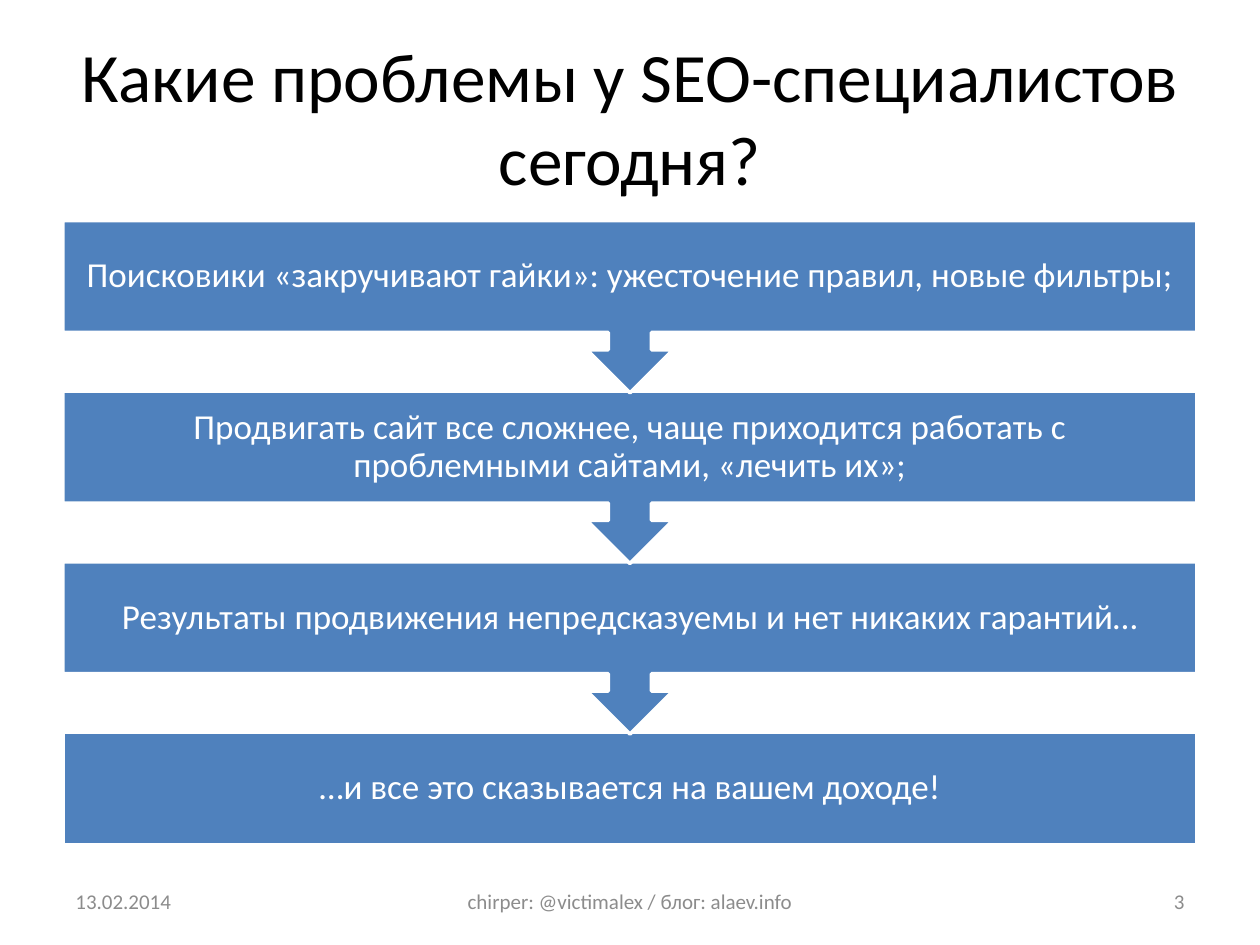
from pptx import Presentation
from pptx.dml.color import RGBColor
from pptx.enum.shapes import MSO_SHAPE as Shape
from pptx.enum.text import MSO_ANCHOR as Anchor, PP_ALIGN as Align
from pptx.util import Pt

COLORS = {"title": "000000", "step": "4F81BD", "light": "FFFFFF", "foot": "8C8C8C"}
FONT = "Calibri"
LEFT, WIDTH = 36, 648
STEP_TOP, PITCH = 126, 97.5
BOX_H, CALL_H = 64, 98.5

STEPS = [
    "Поисковики «закручивают гайки»: ужесточение правил, новые фильтры;",
    "Продвигать сайт все сложнее, чаще приходится работать с проблемными сайтами, «лечить их»;",
    "Результаты продвижения непредсказуемы и нет никаких гарантий…",
    "…и все это сказывается на вашем доходе!",
]
FOOTS = [
    (36, 168, "13.02.2014", Align.LEFT),
    (246, 228, "chirper: @victimalex / блог: alaev.info", Align.CENTER),
    (516, 168, "3", Align.RIGHT),
]


def color(name):
    return RGBColor.from_string(COLORS[name])


def write(shape, text, size, tone, align):
    frame = shape.text_frame
    frame.text = text
    frame.word_wrap = True
    frame.vertical_anchor = Anchor.MIDDLE
    para = frame.paragraphs[0]
    para.alignment = align
    font = para.runs[0].font
    font.name, font.size = FONT, Pt(size)
    font.color.rgb = color(tone)
    return frame


def add_title(slide, text):
    title = slide.shapes.title
    title.left, title.top = Pt(LEFT), Pt(21.6)
    title.width, title.height = Pt(WIDTH), Pt(90)
    write(title, text, 39.6, "title", Align.CENTER)


def add_step(slide, kind, top, height, text):
    step = slide.shapes.add_shape(kind, Pt(LEFT), Pt(top), Pt(WIDTH), Pt(height))
    step.shadow.inherit = False
    step.fill.solid()
    step.fill.fore_color.rgb = color("step")
    step.line.color.rgb = color("light")
    step.line.width = Pt(2)
    frame = write(step, text, 20, "light", Align.CENTER)
    frame.margin_left = frame.margin_right = Pt(11.2)
    frame.margin_top = frame.margin_bottom = Pt(11.2)
    frame.paragraphs[0].line_spacing = 0.9


def add_steps(slide):
    """Stack the steps from the bottom up, so each arrow lies over the next box."""
    last = len(STEPS) - 1
    for i in range(last, -1, -1):
        if i == last:
            kind, height = Shape.RECTANGLE, BOX_H
        else:
            kind, height = Shape.DOWN_ARROW_CALLOUT, CALL_H
        add_step(slide, kind, STEP_TOP + i * PITCH, height, STEPS[i])


def add_foot(slide, left, width, text, align):
    box = slide.shapes.add_textbox(Pt(left), Pt(500.5), Pt(width), Pt(28.75))
    write(box, text, 12, "foot", align)


def main():
    deck = Presentation()
    deck.slide_width, deck.slide_height = Pt(720), Pt(540)
    slide = deck.slides.add_slide(deck.slide_layouts[5])
    add_title(slide, "Какие проблемы у SEO-специалистов сегодня?")
    add_steps(slide)
    for foot in FOOTS:
        add_foot(slide, *foot)
    deck.save("out.pptx")


if __name__ == "__main__":
    main()
